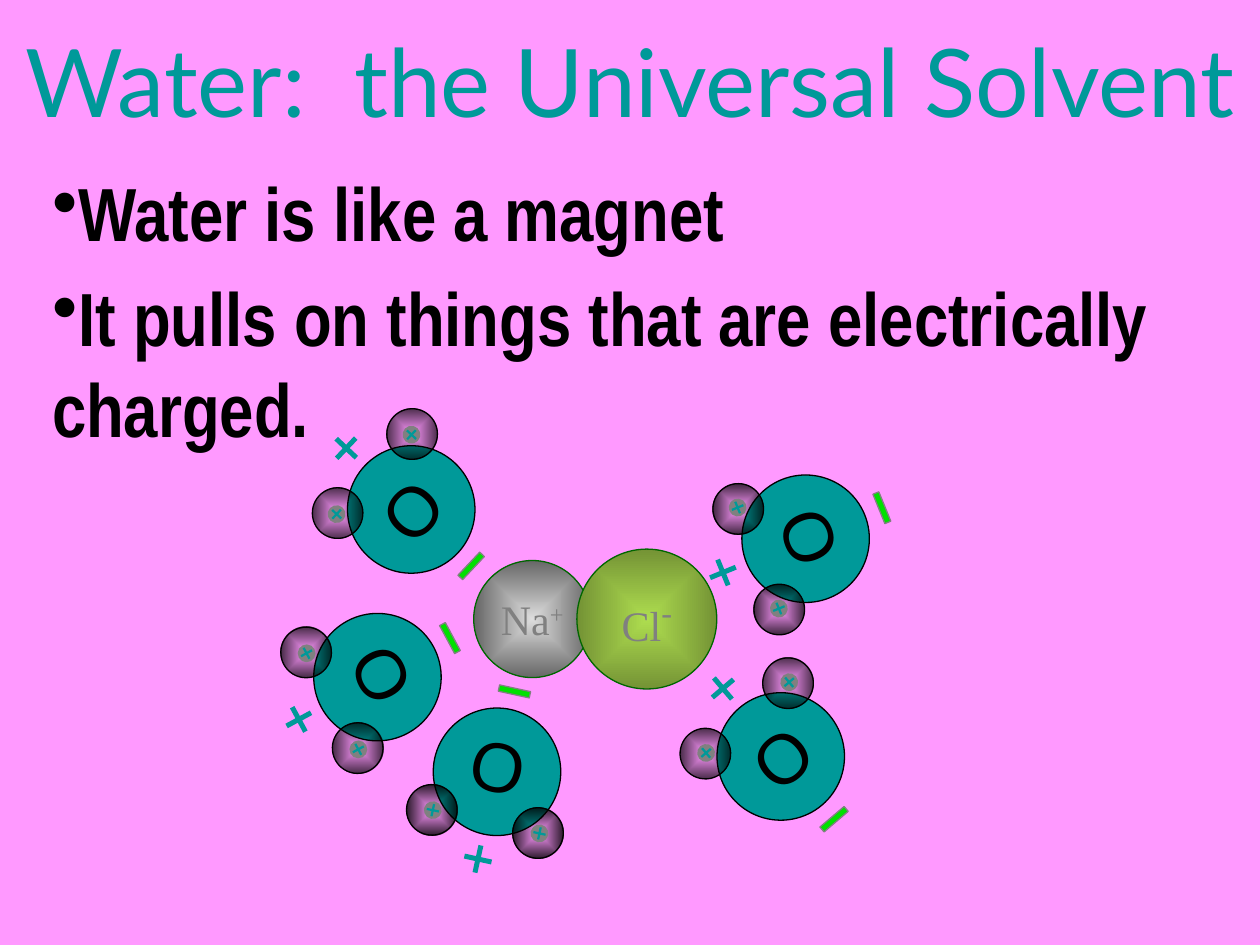
import math

from lxml import etree
from pptx import Presentation
from pptx.dml.color import RGBColor
from pptx.enum.shapes import MSO_SHAPE
from pptx.enum.text import MSO_ANCHOR, MSO_AUTO_SIZE, PP_ALIGN
from pptx.oxml import parse_xml
from pptx.oxml.ns import nsdecls, qn
from pptx.util import Cm, Pt

OVAL, PLUS, BAR = MSO_SHAPE.OVAL, MSO_SHAPE.CROSS, MSO_SHAPE.RECTANGLE
MIDDLE, CENTER = MSO_ANCHOR.MIDDLE, PP_ALIGN.CENTER

COLORS = {
    "background": "FF99FF", "teal": "009999", "black": "000000",
    "gray": "808080", "minus": "00E000", "ion_line": "006600",
    "sodium_light": "DDDDDD", "sodium_dark": "666666",
    "chlorine_light": "AEDD4F", "chlorine_dark": "749335",
}
COLOR = {name: RGBColor.from_string(value) for name, value in COLORS.items()}


def add_part(shapes, kind, center, size, fill, line=None):
    (x, y), (width, height) = center, size
    shape = shapes.add_shape(kind, Cm(x - width / 2), Cm(y - height / 2), Cm(width), Cm(height))
    shape.shadow.inherit = False
    if kind == PLUS:
        shape.adjustments[0] = 0.41
    if isinstance(fill, str):
        shape.fill.solid()
        shape.fill.fore_color.rgb = COLOR[fill]
    else:
        inner, outer, inner_alpha = fill
        shape.fill.background()
        properties = shape.element.spPr
        gradient = parse_xml(
            f'<a:gradFill {nsdecls("a")} rotWithShape="0"><a:gsLst>'
            f'<a:gs pos="0"><a:srgbClr val="{COLORS[inner]}"><a:alpha val="{inner_alpha}"/></a:srgbClr></a:gs>'
            f'<a:gs pos="100000"><a:srgbClr val="{COLORS[outer]}"/></a:gs></a:gsLst>'
            '<a:path path="shape"><a:fillToRect l="50000" t="50000" r="50000" b="50000"/></a:path></a:gradFill>'
        )
        properties.replace(properties.find(qn("a:noFill")), gradient)
    if line:
        shape.line.color.rgb = COLOR[line]
        shape.line.width = Pt(0.75)
    else:
        shape.line.fill.background()
    return shape


def add_label(shape, pieces, font_name, color):
    frame = shape.text_frame
    frame.word_wrap = False
    frame.vertical_anchor = MIDDLE
    paragraph = frame.paragraphs[0]
    paragraph.alignment = CENTER
    for text, size, baseline in pieces:
        run = paragraph.add_run()
        run.text = text
        run.font.name = font_name
        run.font.size = Pt(size)
        run.font.color.rgb = COLOR[color]
        if baseline:
            run.font._element.set("baseline", str(baseline))


presentation = Presentation()
presentation.slide_width, presentation.slide_height = Cm(25.4), Cm(19.05)
slide = presentation.slides.add_slide(presentation.slide_layouts[5])
slide.background.fill.solid()
slide.background.fill.fore_color.rgb = COLOR["background"]

title = slide.shapes.title
title.left, title.top, title.width, title.height = Cm(0), Cm(0), Cm(25.4), Cm(3.2)
title.text_frame.text = "Water:  the Universal Solvent"
title.text_frame.auto_size = MSO_AUTO_SIZE.NONE
title.text_frame.vertical_anchor = MIDDLE
title_paragraph = title.text_frame.paragraphs[0]
title_paragraph.alignment = CENTER
title_font = title_paragraph.runs[0].font
title_font.name, title_font.size = "Lato", Pt(54)
title_font.color.rgb = COLOR["teal"]

body = slide.shapes.add_textbox(Cm(0.8), Cm(3.23), Cm(24.6), Cm(6.07))
body.text_frame.word_wrap = True
body.text_frame.text = "Water is like a magnet\nIt pulls on things that are electrically charged."
for paragraph in body.text_frame.paragraphs:
    paragraph.space_before = Pt(8.6)
    font = paragraph.runs[0].font
    font.name, font.size, font.bold = "Arial Narrow", Pt(43), True
    font.color.rgb = COLOR["black"]
    properties = paragraph._p.get_or_add_pPr()
    properties.set("marL", "0")
    properties.set("indent", "0")
    etree.SubElement(properties, qn("a:buChar")).set("char", "•")

ions = [
    ((10.73, 12.48), 2.36, "sodium", [("Na", 24, 0), ("+", 24, 30000)]),
    ((13.04, 12.48), 2.82, "chlorine", [("Cl", 24, 0), ("-", 32, 30000)]),
]
for center, diameter, name, pieces in ions:
    gradient = (f"{name}_light", f"{name}_dark", 100000)
    ion = add_part(slide.shapes, OVAL, center, (diameter, diameter), gradient, "ion_line")
    add_label(ion, pieces, "Times New Roman", "gray")

hydrogen_fill = ("black", "black", 0)
molecule_parts = [
    (OVAL, (0, 0), (2.57, 2.57), "teal", "black"),
    (OVAL, (1.07, -1.03), (1.02, 1.02), hydrogen_fill, "black"),
    (OVAL, (-1.12, -1.03), (1.02, 1.02), hydrogen_fill, "black"),
    (OVAL, (-1.1, -1.03), (0.36, 0.36), "gray", None),
    (PLUS, (-1.1, -1.03), (0.25, 0.25), "teal", None),
    (OVAL, (1.1, -1.03), (0.36, 0.36), "gray", None),
    (PLUS, (1.1, -1.03), (0.25, 0.25), "teal", None),
    (PLUS, (0, -1.8), (0.56, 0.56), "teal", None),
    (BAR, (0, 1.66), (0.64, 0.13), "minus", "gray"),
]
molecules = [
    ((15.74, 15.25), 319.6, False),
    ((10.02, 15.56), 12.3, True),
    ((7.61, 13.65), 61.7, True),
    ((16.24, 10.86), 247.8, False),
    ((8.29, 10.27), 133.3, True),
]
for (center_x, center_y), rotation, flipped in molecules:
    group = slide.shapes.add_group_shape()
    cosine, sine = math.cos(math.radians(rotation)), math.sin(math.radians(rotation))
    for kind, (x, y), size, fill, line in molecule_parts:
        if flipped:
            y = -y
        center = (center_x + x * cosine - y * sine, center_y + x * sine + y * cosine)
        part = add_part(group.shapes, kind, center, size, fill, line)
        part.rotation = rotation
        if flipped:
            part.element.spPr.get_or_add_xfrm().set("flipV", "1")
        if (x, y) == (0, 0):
            add_label(part, [("O", 40, 0)], "Arial", "black")

presentation.save("out.pptx")
